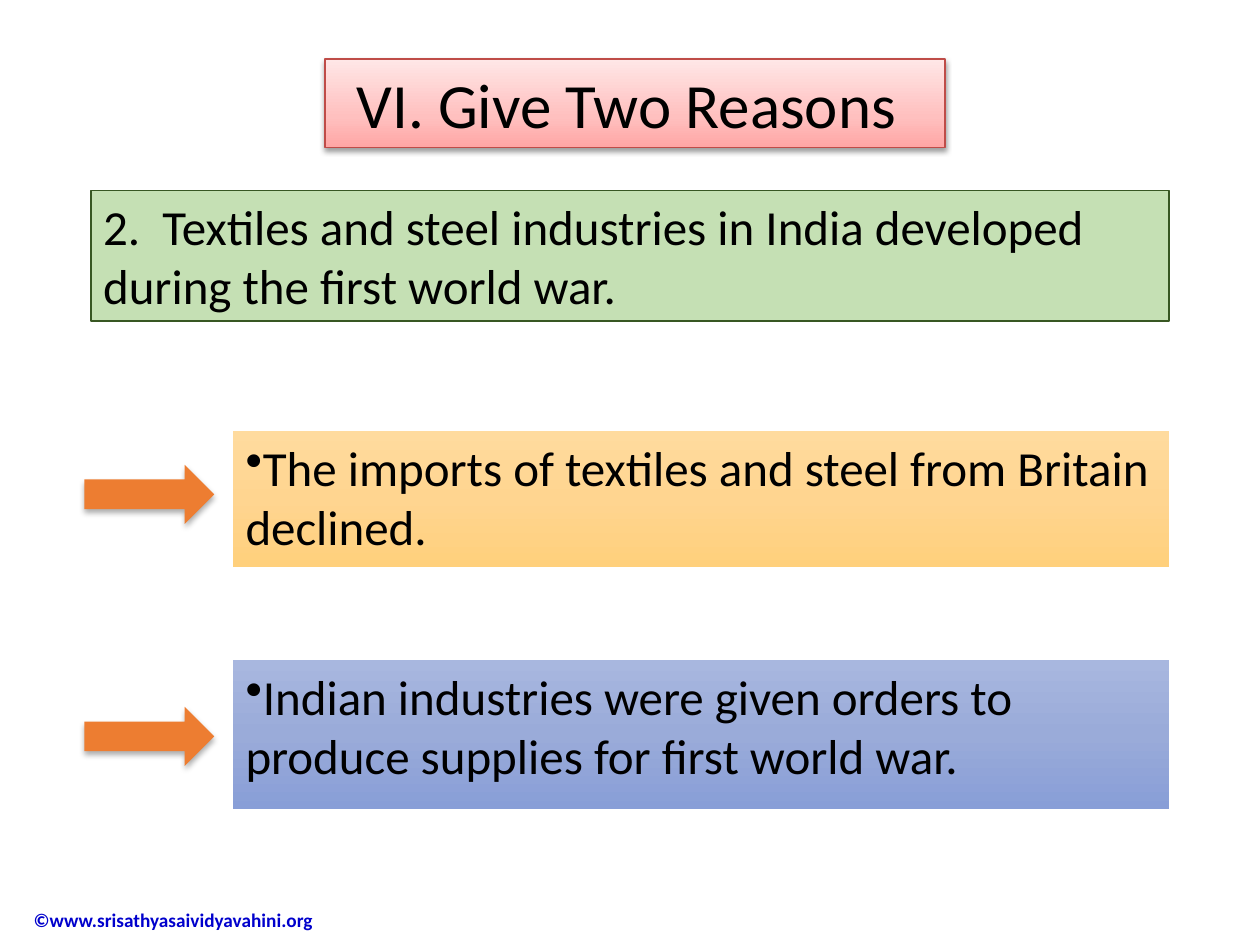
"""Build the "Give Two Reasons" slide."""
from lxml import etree
from pptx import Presentation
from pptx import util as u
from pptx.dml.color import RGBColor
from pptx.enum import shapes, text
from pptx.oxml import ns

FONT = "Calibri"
BLACK = RGBColor(0x00, 0x00, 0x00)
LINK_BLUE = RGBColor(0x00, 0x00, 0xCC)
GREEN = RGBColor(0xC5, 0xE0, 0xB4)
DARK_GREEN = RGBColor(0x38, 0x57, 0x23)
RED = RGBColor(0xBF, 0x4C, 0x48)
ORANGE = RGBColor(0xED, 0x7D, 0x31)
PINKS = [(0, RGBColor(0xFF, 0xA6, 0xA5)), (35, RGBColor(0xFF, 0xC0, 0xBF)),
         (100, RGBColor(0xFF, 0xE7, 0xE7))]
AMBERS = [(0, RGBColor(0xFF, 0xDB, 0x9E)), (50, RGBColor(0xFF, 0xD5, 0x90)),
          (100, RGBColor(0xFF, 0xD0, 0x7C))]
BLUES = [(0, RGBColor(0xA8, 0xB7, 0xDF)), (50, RGBColor(0x9A, 0xAB, 0xD9)),
         (100, RGBColor(0x88, 0x9E, 0xD7))]

REASONS = [
    ("The imports of textiles and steel from Britain declined.",
     8.69, 2.74, 9.37, AMBERS),
    ("Indian industries were given orders to produce supplies for first world war.",
     13.31, 3.0, 14.25, BLUES),
]


def add_child(parent, tag, **attributes):
    """Append a DrawingML element and return it."""
    child = etree.SubElement(parent, ns.qn(tag))
    for name, value in attributes.items():
        child.set(name, str(value))
    return child


def fill_gradient(shape, stops, angle):
    """Fill a shape with a linear gradient of (percent, colour) stops."""
    shape.fill.gradient()
    shape.fill.gradient_angle = angle
    stop_list = shape._element.spPr.find(".//" + ns.qn("a:gsLst"))
    for stop in list(stop_list):
        stop_list.remove(stop)
    for percent, colour in stops:
        stop = add_child(stop_list, "a:gs", pos=percent * 1000)
        add_child(stop, "a:srgbClr", val=colour)


def drop_shadow(shape, opacity, blur, distance):
    """Give a shape a black shadow straight below it."""
    shape.shadow.inherit = False
    effects = shape._element.spPr.find(ns.qn("a:effectLst"))
    shadow = add_child(effects, "a:outerShdw", blurRad=u.Pt(blur), dist=u.Pt(distance),
                       dir=5400000, algn="ctr", rotWithShape=0)
    colour = add_child(shadow, "a:srgbClr", val=BLACK)
    add_child(colour, "a:alpha", val=opacity * 1000)


def place(shape, left, top, width, height):
    """Move and size a shape, in centimetres."""
    shape.left, shape.top = u.Cm(left), u.Cm(top)
    shape.width, shape.height = u.Cm(width), u.Cm(height)


def write(shape, words, size, align=text.PP_ALIGN.LEFT, anchor=text.MSO_ANCHOR.TOP,
          colour=BLACK, bold=False, bullet=False):
    """Write one formatted paragraph into a shape."""
    frame = shape.text_frame
    frame.word_wrap = True
    frame.auto_size = text.MSO_AUTO_SIZE.NONE
    frame.vertical_anchor = anchor
    para = frame.paragraphs[0]
    para.text = words
    para.alignment = align
    if bullet:
        add_child(para._p.get_or_add_pPr(), "a:buChar", char="•")
    font = para.font
    font.name, font.size, font.bold = FONT, u.Pt(size), bold
    font.color.rgb = colour


def add_panel(page, kind, left, top, width, height):
    """Add a preset shape without line or shadow."""
    panel = page.shapes.add_shape(kind, u.Cm(left), u.Cm(top), u.Cm(width), u.Cm(height))
    panel.shadow.inherit = False
    panel.line.fill.background()
    return panel


def outline(shape, colour, width):
    """Draw a solid outline round a shape."""
    shape.line.color.rgb = colour
    shape.line.width = u.Pt(width)


def format_title(page):
    """Turn the title placeholder into the pink heading."""
    title = page.shapes.title
    place(title, 6.55, 1.19, 12.5, 1.78)
    fill_gradient(title, PINKS, 90)
    outline(title, RED, 0.75)
    drop_shadow(title, 38, 3.1, 1.6)
    write(title, "VI. Give Two Reasons", 36, text.PP_ALIGN.CENTER, text.MSO_ANCHOR.MIDDLE)
    title.text_frame.margin_right = u.Cm(0.6)


def add_question(page):
    """Add the green question panel."""
    panel = add_panel(page, shapes.MSO_SHAPE.RECTANGLE, 1.83, 3.84, 21.74, 2.64)
    panel.fill.solid()
    panel.fill.fore_color.rgb = GREEN
    outline(panel, DARK_GREEN, 1)
    write(panel, "2.  Textiles and steel industries in India developed "
                 "during the first world war.", 28)


def add_reason(page, words, top, height, arrow_top, stops):
    """Add one bulleted reason and the arrow that points to it."""
    panel = add_panel(page, shapes.MSO_SHAPE.RECTANGLE, 4.7, top, 18.87, height)
    fill_gradient(panel, stops, 270)
    write(panel, words, 28, bullet=True)
    arrow = add_panel(page, shapes.MSO_SHAPE.RIGHT_ARROW, 1.7, arrow_top, 2.62, 1.19)
    arrow.fill.solid()
    arrow.fill.fore_color.rgb = ORANGE
    drop_shadow(arrow, 32, 3.5, 2.2)


def add_copyright(page):
    """Add the copyright line at the foot of the page."""
    box = page.shapes.add_textbox(u.Cm(0.43), u.Cm(18.03), u.Cm(6.83), u.Cm(1.04))
    write(box, "©www.srisathyasaividyavahini.org", 11, anchor=text.MSO_ANCHOR.MIDDLE,
          colour=LINK_BLUE, bold=True)


def main():
    """Build and save the deck."""
    deck = Presentation()
    deck.slide_width, deck.slide_height = u.Cm(25.4), u.Cm(19.05)
    page = deck.slides.add_slide(deck.slide_layouts[5])
    add_copyright(page)
    format_title(page)
    add_question(page)
    for reason in REASONS:
        add_reason(page, *reason)
    deck.save("out.pptx")


if __name__ == "__main__":
    main()
